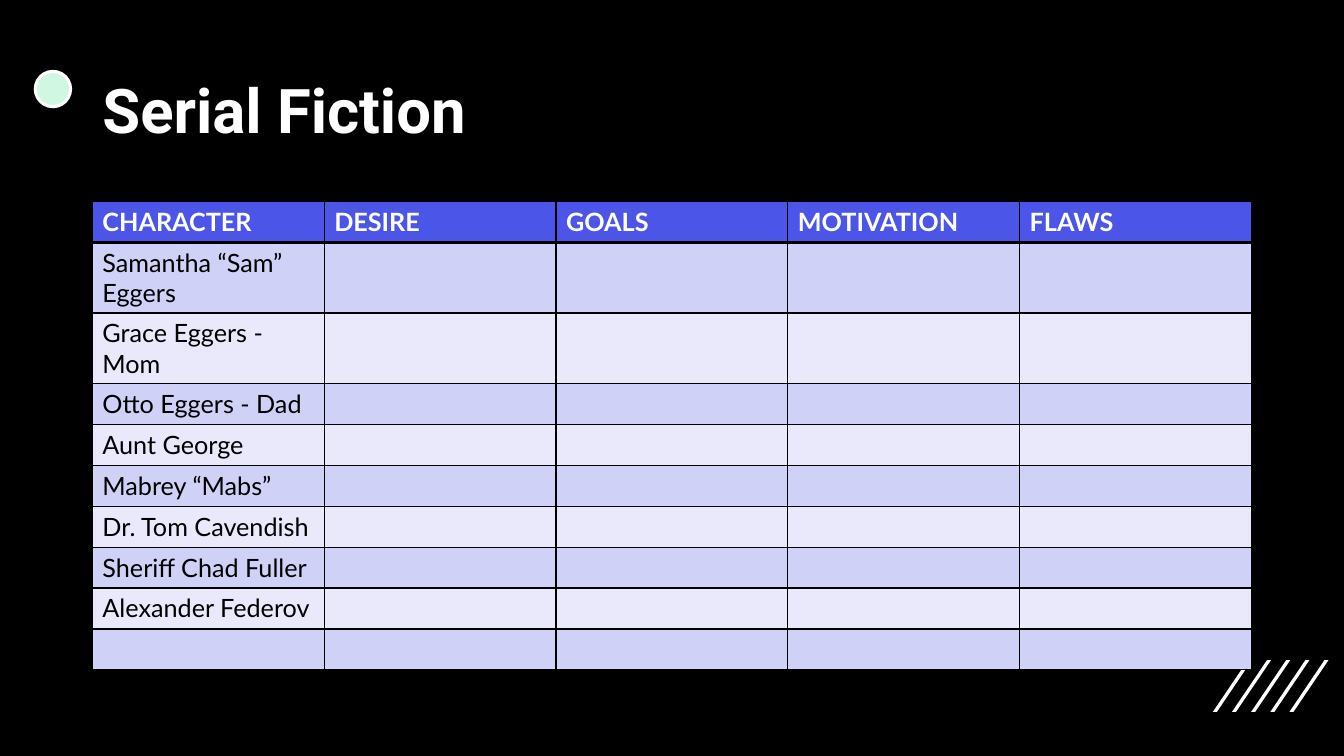
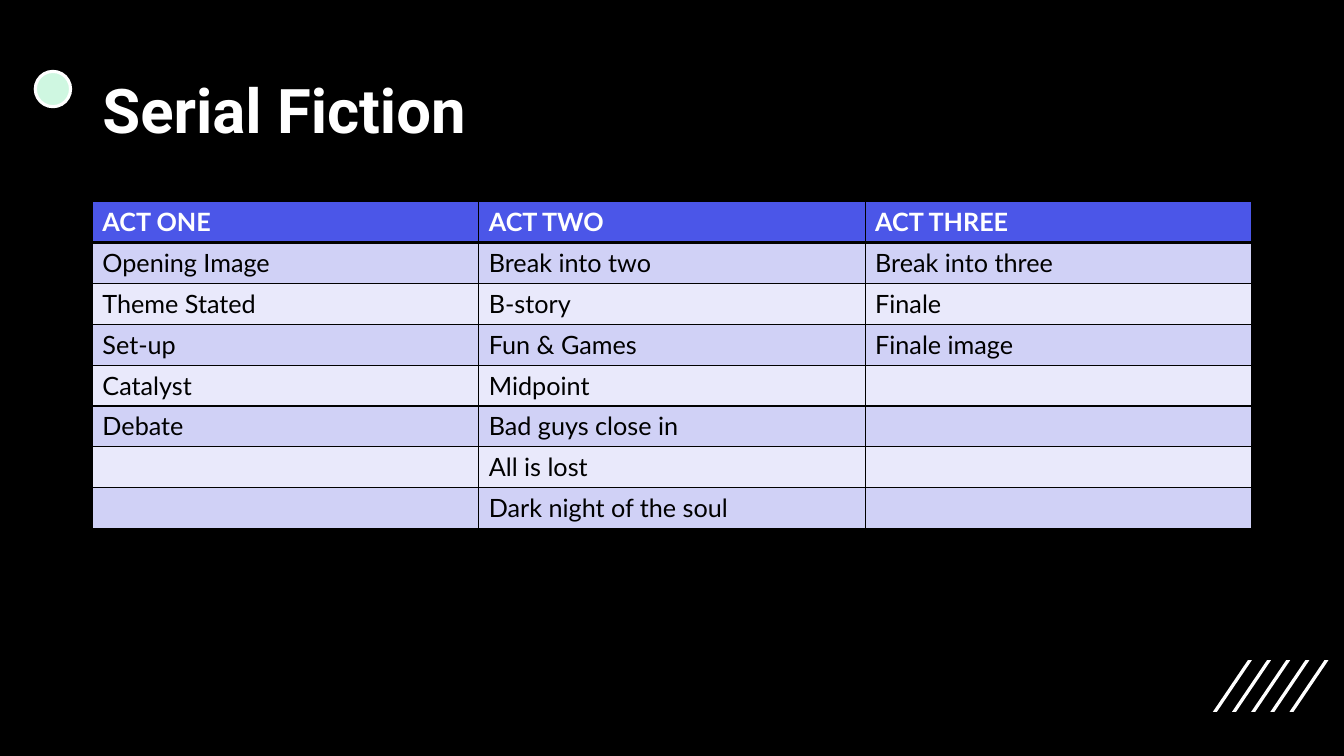
from lxml import etree
from pptx import Presentation
from pptx.dml.color import RGBColor
from pptx.enum.shapes import MSO_SHAPE
from pptx.enum.text import MSO_ANCHOR, MSO_AUTO_SIZE, PP_ALIGN
from pptx.oxml.ns import qn
from pptx.util import Inches, Pt

OVAL = MSO_SHAPE.OVAL
MIDDLE = MSO_ANCHOR.MIDDLE
LEFT = PP_ALIGN.LEFT
NO_AUTOFIT = MSO_AUTO_SIZE.NONE

SLIDE_WIDTH, SLIDE_HEIGHT = Inches(13.333), Inches(7.5)
GRID_COLUMNS, GRID_ROWS = 160, 90
MARGIN, CONTENT_COLUMNS = 11, 138
TABLE_TOP, TABLE_ROW = 24, 4.87

BLACK, WHITE = "000000", "FFFFFF"
MINT, INDIGO = "CFF7E1", "4B56E8"
BANDS = ("D0D1F6", "E9E9FB")
TITLE_FONT, TABLE_FONT = "Roboto", "Lato"
THIN, THICK = 1, 3

CHARACTERS = [
    ["CHARACTER", "DESIRE", "GOALS", "MOTIVATION", "FLAWS"],
    ["Samantha “Sam” Eggers"],
    ["Grace Eggers - Mom"],
    ["Otto Eggers - Dad"],
    ["Aunt George"],
    ["Mabrey “Mabs”"],
    ["Dr. Tom Cavendish"],
    ["Sheriff Chad Fuller"],
    ["Alexander Federov"],
    [],
]
ACTS = [
    ["ACT ONE", "ACT TWO", "ACT THREE"],
    ["Opening Image", "Break into two", "Break into three"],
    ["Theme Stated", "B-story", "Finale"],
    ["Set-up", "Fun & Games", "Finale image"],
    ["Catalyst", "Midpoint"],
    ["Debate", "Bad guys close in"],
    ["", "All is lost"],
    ["", "Dark night of the soul"],
]


def columns(count):
    return round(SLIDE_WIDTH * count / GRID_COLUMNS)


def rows(count):
    return round(SLIDE_HEIGHT * count / GRID_ROWS)


def paint(fill, color):
    fill.solid()
    fill.fore_color.rgb = RGBColor.from_string(color)


def add_run(paragraph, text, font_name, size, color, bold):
    run = paragraph.add_run()
    run.text = text
    run.font.name = font_name
    run.font.size = Pt(size)
    run.font.bold = bold
    paint(run.font.fill, color)


def add_stripes(slide, count=5):
    thickness, slant, pitch = columns(0.48), columns(4.16), columns(2.28)
    top, bottom = rows(78.6), rows(84.74)
    for index in range(count):
        left = columns(144.4) + index * pitch
        outline = slide.shapes.build_freeform(left, bottom)
        outline.add_line_segments([
            (left + slant, top),
            (left + slant + thickness, top),
            (left + thickness, bottom),
        ])
        stripe = outline.convert_to_shape()
        stripe.shadow.inherit = False
        paint(stripe.fill, WHITE)
        stripe.line.fill.background()


def add_dot(slide):
    dot = slide.shapes.add_shape(
        OVAL, columns(4.2), rows(8.5), columns(4.2), rows(4.2))
    dot.shadow.inherit = False
    paint(dot.fill, MINT)
    paint(dot.line.fill, WHITE)
    dot.line.width = Pt(2.25)


def set_title(slide, text):
    title = slide.shapes.title
    title.left, title.top = columns(MARGIN), rows(4.8)
    title.width, title.height = columns(CONTENT_COLUMNS), rows(17.4)
    frame = title.text_frame
    frame.auto_size = NO_AUTOFIT
    frame.vertical_anchor = MIDDLE
    paragraph = frame.paragraphs[0]
    paragraph.alignment = LEFT
    paragraph.line_spacing = 0.9
    add_run(paragraph, text, TITLE_FONT, 44, WHITE, True)


def set_borders(cell, top, bottom):
    properties = cell._tc.get_or_add_tcPr()
    widths = {"a:lnL": THIN, "a:lnR": THIN, "a:lnT": top, "a:lnB": bottom}
    for side, width in widths.items():
        border = etree.SubElement(properties, qn(side), w=str(Pt(width)))
        fill = etree.SubElement(border, qn("a:solidFill"))
        etree.SubElement(fill, qn("a:srgbClr"), val=BLACK)


def add_story_table(slide, entries):
    column_count = len(entries[0])
    table = slide.shapes.add_table(
        len(entries), column_count, columns(MARGIN), rows(TABLE_TOP),
        columns(CONTENT_COLUMNS), rows(TABLE_ROW * len(entries))).table
    for column in table.columns:
        column.width = columns(CONTENT_COLUMNS / column_count)
    for row_index, entry in enumerate(entries):
        table.rows[row_index].height = rows(TABLE_ROW)
        header = row_index == 0
        for column_index in range(column_count):
            cell = table.cell(row_index, column_index)
            set_borders(cell, THICK if row_index == 1 else THIN,
                        THICK if header else THIN)
            paint(cell.fill, INDIGO if header else BANDS[(row_index - 1) % 2])
            if column_index < len(entry) and entry[column_index]:
                add_run(cell.text_frame.paragraphs[0], entry[column_index],
                        TABLE_FONT, 18, WHITE if header else BLACK, header)


def add_story_slide(deck, title, entries):
    slide = deck.slides.add_slide(deck.slide_layouts.get_by_name("Title Only"))
    add_stripes(slide)
    add_dot(slide)
    set_title(slide, title)
    add_story_table(slide, entries)


def main():
    deck = Presentation()
    deck.slide_width, deck.slide_height = SLIDE_WIDTH, SLIDE_HEIGHT
    paint(deck.slide_master.background.fill, BLACK)
    for entries in (CHARACTERS, ACTS):
        add_story_slide(deck, "Serial Fiction", entries)
    deck.save("out.pptx")


if __name__ == "__main__":
    main()
